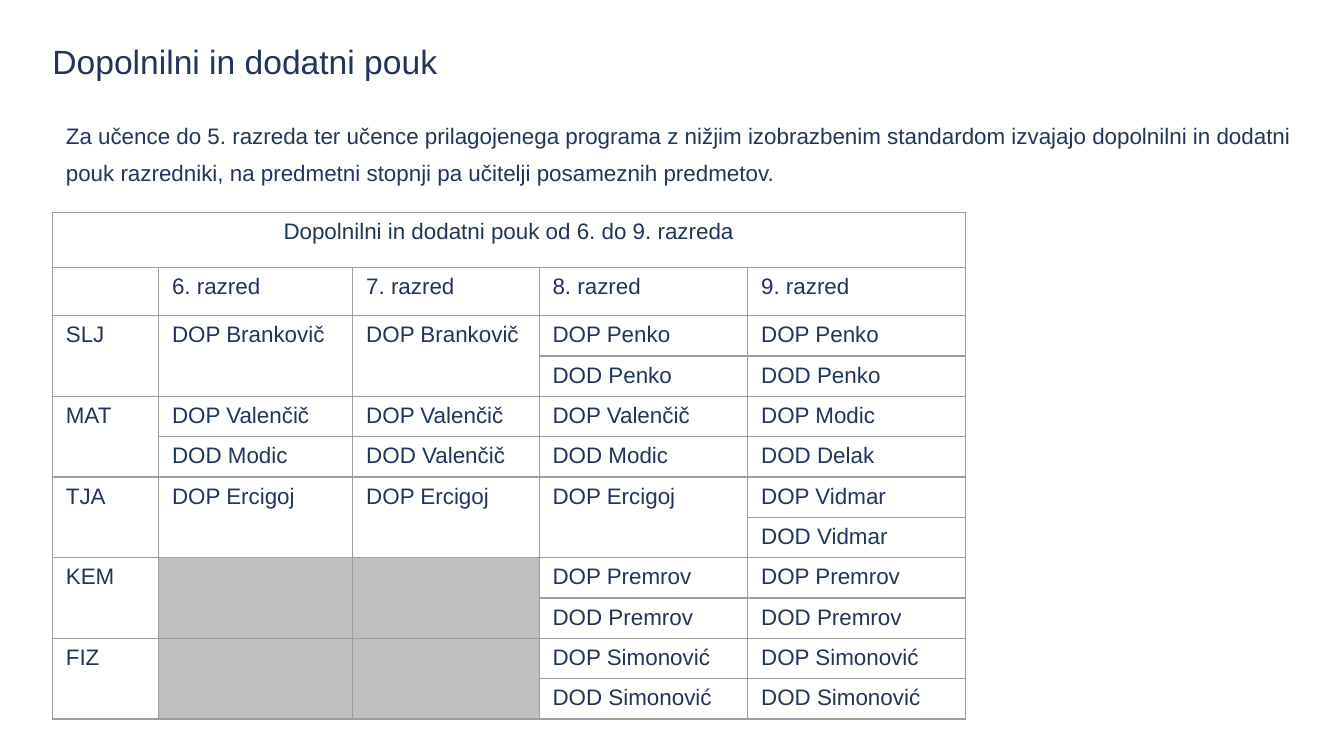
from dataclasses import dataclass

from lxml.etree import SubElement
from pptx import Presentation
from pptx.dml.color import RGBColor
from pptx.enum.text import MSO_ANCHOR, MSO_AUTO_SIZE, PP_ALIGN
from pptx.oxml.ns import qn
from pptx.util import Inches, Pt


@dataclass(frozen=True)
class Theme:
    """Hold the colours and type sizes of the slide."""
    font: str = "Arial"
    ink: str = "21355A"
    paper: str = "FFFFFF"
    blank: str = "BFBFBF"
    rule: str = "9E9E9E"
    head: int = 18
    body: int = 12
    lead: int = 20
    line: float = 0.75


THEME = Theme()
WIDE = Inches(10)
HIGH = WIDE * 9 // 16
LEFT = 3.9
COLS = (7.9, 14.45, 13.87, 15.52, 16.2)
ROWS = (7.3, 6.4) + (5.34,) * 10

TITLE = "Dopolnilni in dodatni pouk"
INTRO = (
    "Za učence do 5. razreda ter učence prilagojenega programa z nižjim "
    "izobrazbenim standardom izvajajo dopolnilni in dodatni pouk razredniki, "
    "na predmetni stopnji pa učitelji posameznih predmetov."
)
CAPTION = "Dopolnilni in dodatni pouk od 6. do 9. razreda"
KINDS = ("DOP", "DOD")
STAFF = {
    "SLJ": ("Brankovič", "Brankovič", "Penko Penko", "Penko Penko"),
    "MAT": ("Valenčič Modic", "Valenčič Valenčič", "Valenčič Modic", "Modic Delak"),
    "TJA": ("Ercigoj", "Ercigoj", "Ercigoj", "Vidmar Vidmar"),
    "KEM": ("", "", "Premrov Premrov", "Premrov Premrov"),
    "FIZ": ("", "", "Simonović Simonović", "Simonović Simonović"),
}


def across(part):
    """Return a percentage of the slide's width."""
    return round(WIDE * part / 100)


def down(part):
    """Return a percentage of the slide's height."""
    return round(HIGH * part / 100)


def write(frame, text, size=THEME.body, align=PP_ALIGN.LEFT, lead=None):
    """Write one formatted paragraph without a bullet."""
    para = frame.paragraphs[0]
    props = para._p.get_or_add_pPr()
    props.set("marL", "0")
    props.set("indent", "0")
    SubElement(props, qn("a:buNone"))
    para.alignment = align
    para.space_before = Pt(0)
    if lead:
        para.line_spacing = Pt(lead)
    if not text:
        SubElement(para._p, qn("a:endParaRPr"), sz=str(size * 100))
        return
    run = para.add_run()
    run.text = text
    run.font.name = THEME.font
    run.font.size = Pt(size)
    run.font.color.rgb = RGBColor.from_string(THEME.ink)


def place(shape, left, top, width, height):
    """Move a shape to shares of the slide and return its text frame."""
    shape.left, shape.top = across(left), down(top)
    shape.width, shape.height = across(width), down(height)
    frame = shape.text_frame
    frame.word_wrap = True
    frame.auto_size = MSO_AUTO_SIZE.NONE
    return frame


def heading(shape):
    """Fill the title placeholder."""
    frame = place(shape, LEFT, 2.4, 75.5, 8.36)
    frame.vertical_anchor = MSO_ANCHOR.BOTTOM
    frame.margin_left = frame.margin_right = 0
    frame.margin_top = frame.margin_bottom = 0
    write(frame, TITLE, size=THEME.head)


def intro(shape):
    """Fill the body placeholder."""
    frame = place(shape, LEFT, 13.83, 95.1, 11.2)
    frame.vertical_anchor = MSO_ANCHOR.TOP
    write(frame, INTRO, lead=THEME.lead)


def border(cell):
    """Rule all four sides of a cell."""
    props = cell._tc.get_or_add_tcPr()
    for side in ("lnL", "lnR", "lnT", "lnB"):
        line = SubElement(props, qn(f"a:{side}"), w=str(Pt(THEME.line)))
        fill = SubElement(line, qn("a:solidFill"))
        SubElement(fill, qn("a:srgbClr"), val=THEME.rule)


def paint(cell, color):
    """Give a cell a solid fill."""
    cell.fill.solid()
    cell.fill.fore_color.rgb = RGBColor.from_string(color)


def layout():
    """Return cell texts, grey cells and merged spans by position."""
    texts = {(0, 0): CAPTION}
    texts.update({(1, col): f"{col + 5}. razred" for col in range(1, len(COLS))})
    grey, spans = set(), [((0, 0), (0, len(COLS) - 1))]
    for index, (subject, staff) in enumerate(STAFF.items()):
        top = 2 + 2 * index
        texts[top, 0] = subject
        spans.append(((top, 0), (top + 1, 0)))
        for col, names in enumerate(staff, 1):
            people = names.split()
            for step, (kind, name) in enumerate(zip(KINDS, people)):
                texts[top + step, col] = f"{kind} {name}"
            if len(people) < 2:
                spans.append(((top, col), (top + 1, col)))
            if not people:
                grey.update({(top, col), (top + 1, col)})
    return texts, grey, spans


def roster(slide):
    """Add the table of lessons and teachers."""
    texts, grey, spans = layout()
    table = slide.shapes.add_table(
        len(ROWS), len(COLS), across(LEFT), down(28.08),
        across(sum(COLS)), down(sum(ROWS)),
    ).table
    table.first_row = table.horz_banding = False
    for col, part in zip(table.columns, COLS):
        col.width = across(part)
    for row, part in zip(table.rows, ROWS):
        row.height = down(part)
    for row in range(len(ROWS)):
        for col in range(len(COLS)):
            cell, spot = table.cell(row, col), (row, col)
            border(cell)
            paint(cell, THEME.blank if spot in grey else THEME.paper)
            align = PP_ALIGN.CENTER if row == 0 else PP_ALIGN.LEFT
            write(cell.text_frame, texts.get(spot, ""), align=align)
    for first, last in spans:
        table.cell(*first).merge(table.cell(*last))


def main():
    """Build and save the slide."""
    deck = Presentation()
    deck.slide_width, deck.slide_height = WIDE, HIGH
    slide = deck.slides.add_slide(deck.slide_layouts[1])
    heading(slide.shapes.title)
    intro(slide.placeholders[1])
    roster(slide)
    deck.save("out.pptx")


if __name__ == "__main__":
    main()
